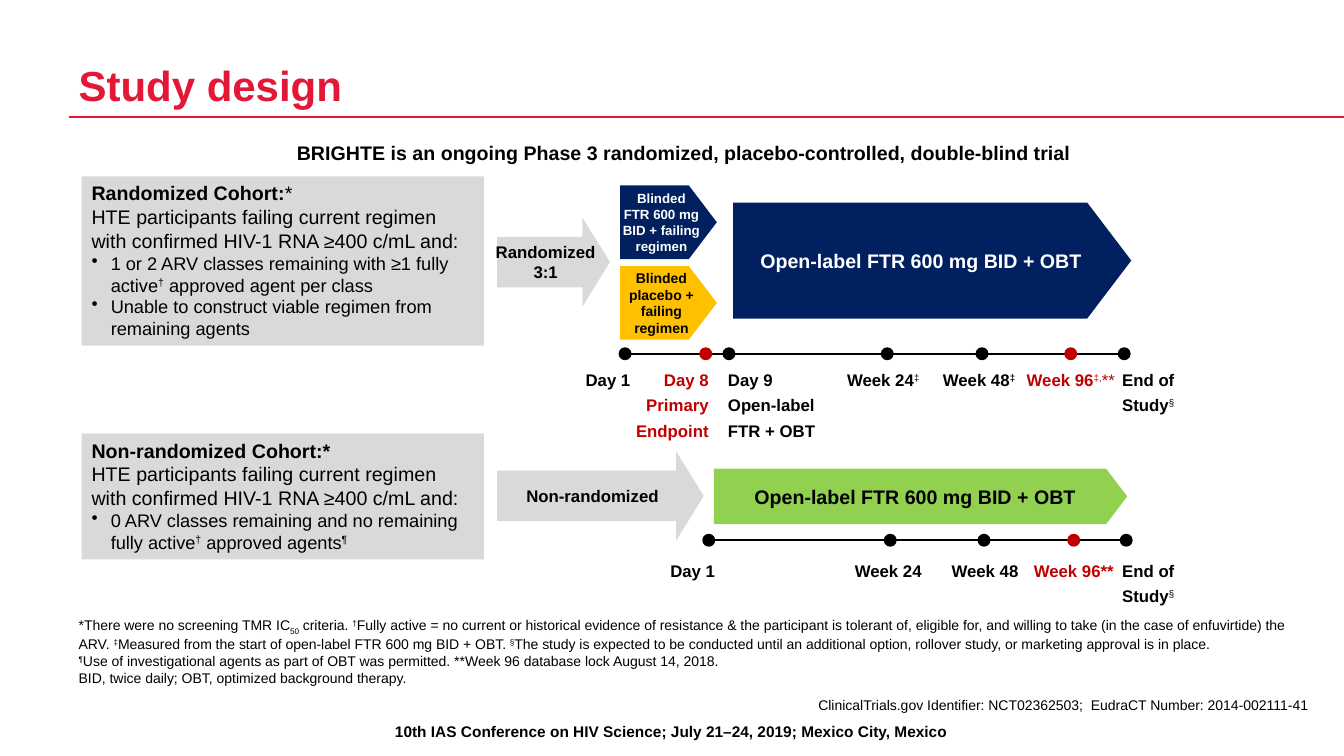
"""Build the study design slide with two cohorts and their timelines."""
from lxml import etree
from pptx import Presentation
from pptx import util as u
from pptx.dml.color import RGBColor
from pptx.enum import shapes, text
from pptx.oxml.ns import qn

INK = {"black": "000000", "white": "FFFFFF", "red": "E31836", "dark": "C00000",
       "grey": "D9D9D9", "navy": "002060", "gold": "FFC000", "green": "92D050"}
CELL = u.Inches(0.1)
KIND = shapes.MSO_SHAPE
LEFT, MID, RIGHT = text.PP_ALIGN.LEFT, text.PP_ALIGN.CENTER, text.PP_ALIGN.RIGHT
TOP, CORE, LOW = text.MSO_ANCHOR.TOP, text.MSO_ANCHOR.MIDDLE, text.MSO_ANCHOR.BOTTOM

deck = Presentation()
deck.slide_width, deck.slide_height = u.Inches(13.33), u.Inches(7.5)
slide = deck.slides.add_slide(deck.slide_layouts[6])


def box(kind, spot, lines=(), size=12, ink="black", fill=None, bold=True,
        align=MID, anchor=CORE, pad=True, wrap=True, gap=0):
    """Add a shape or text box; ^ toggles superscript, _ subscript, ~ bold."""
    place = [round(n * CELL) for n in spot]
    if kind is None:
        item = slide.shapes.add_textbox(*place)
    else:
        item = slide.shapes.add_shape(kind, *place)
        item.shadow.inherit = False
        item.fill.solid()
        item.fill.fore_color.rgb = RGBColor.from_string(INK[fill])
        item.line.fill.background()
    frame = item.text_frame
    frame.word_wrap, frame.vertical_anchor = wrap, anchor
    if not pad:
        frame.margin_left = frame.margin_right = 0
        frame.margin_top = frame.margin_bottom = 0
    for i, line in enumerate(lines):
        para = frame.paragraphs[0] if i == 0 else frame.add_paragraph()
        para.alignment = align
        if i and gap:
            para.space_before = u.Pt(gap)
        dot = line.startswith("•")
        if dot:
            props = para._p.get_or_add_pPr()
            props.set("marL", str(u.Inches(0.19)))
            props.set("indent", str(-u.Inches(0.19)))
            etree.SubElement(props, qn("a:buChar")).set("char", "•")
        base, heavy, part = 0, bold, ""
        for sign in line.lstrip("•") + "\0":
            if sign not in "^_~\0":
                part += sign
                continue
            if part:
                run = para.add_run()
                run.text, part = part, ""
                font = run.font
                font.name, font.size = "Arial", u.Pt(size - dot)
                font.bold = heavy
                font.color.rgb = RGBColor.from_string(INK[ink])
                if base:
                    run._r.get_or_add_rPr().set("baseline", str(base))
            if sign == "~":
                heavy = not heavy
            elif sign in "^_":
                base = 0 if base else {"^": 30000, "_": -25000}[sign]
    return item


def rule(x, y, end, ink, width):
    """Draw a level line."""
    line = slide.shapes.add_connector(
        shapes.MSO_CONNECTOR.STRAIGHT, *(round(n * CELL) for n in (x, y, end, y)))
    line.line.color.rgb = RGBColor.from_string(INK[ink])
    line.line.width = u.Pt(width)
    etree.SubElement(line._element.spPr, qn("a:effectLst"))


rule(6.8, 11.6, 133.3, "red", 2)
title = box(None, (7.8, 1.7, 110, 9.2), ["Study design"], 30, "red",
            align=LEFT, anchor=LOW, pad=False)
title.text_frame.paragraphs[0].line_spacing = u.Pt(35)
box(KIND.ROUNDED_RECTANGLE, (27.8, 13, 80.1, 4.3),
    ["BRIGHTE is an ongoing Phase 3 randomized, placebo-controlled, double-blind trial"],
    14, fill="white")

lead = "HTE participants failing current regimen with confirmed HIV-1 RNA ≥400 c/mL and:"
cohorts = [
    (17.5, 16.8, ["~Randomized Cohort:~*", lead,
                  "•1 or 2 ARV classes remaining with ≥1 fully active^†^ approved agent per class",
                  "•Unable to construct viable regimen from remaining agents"]),
    (43, 12.5, ["~Non-randomized Cohort:*", lead,
                "•0 ARV classes remaining and no remaining fully active^†^ approved agents^¶"]),
]
for y, high, lines in cohorts:
    box(KIND.RECTANGLE, (8.1, y, 39.9, high), lines, 14, fill="grey",
        bold=False, align=LEFT, anchor=TOP)

for y, wide, lines in [(21.6, 11.2, ["Randomized", "3:1"]),
                       (44.8, 20.5, ["Non-randomized"])]:
    arrow = box(KIND.RIGHT_ARROW, (49.3, y, wide, 8.8), lines, fill="grey", wrap=False)
    arrow.adjustments[0], arrow.adjustments[1] = 0.57, 0.31

phase = ["Open-label FTR 600 mg BID + OBT"]
stages = [
    ((61.5, 18.4, 9.6, 7.3), ["Blinded", "FTR 600 mg", "BID + failing", "regimen"],
     9.5, "white", "navy"),
    ((61.5, 26.4, 9.6, 7.3), ["Blinded", "placebo +", "failing", "regimen"],
     10, "black", "gold"),
    ((72.7, 20.1, 39.5, 11.5), phase, 14, "white", "navy"),
    ((70.8, 46.5, 41, 5.5), phase, 14, "black", "green"),
]
for spot, lines, size, ink, fill in stages:
    stage = box(KIND.PENTAGON, spot, lines, size, ink, fill, wrap=False)
    stage.adjustments[0] = 0.38

finish = ["End of", "Study~^§"]
times = [
    (35.1, 36.7, [
        (62, 60.3, MID, "black", ["Day 1"]),
        (70, 70.3, RIGHT, "dark", ["Day 8", "Primary", "Endpoint"]),
        (72.3, 72.2, LEFT, "black", ["Day 9", "Open-label", "FTR + OBT"]),
        (88, 87.6, MID, "black", ["Week 24~^‡"]),
        (97.4, 97.1, MID, "black", ["Week 48^‡"]),
        (106.2, 106.2, MID, "dark", ["Week 96~^‡,^**"]),
        (111.5, 111.3, LEFT, "black", finish)]),
    (53.6, 55.6, [
        (70.3, 68.7, MID, "black", ["Day 1"]),
        (88.3, 88.1, MID, "black", ["Week 24"]),
        (97.6, 97.7, MID, "black", ["Week 48"]),
        (106.5, 106.5, MID, "dark", ["Week 96**"]),
        (111.7, 111.3, LEFT, "black", finish)]),
]
wide = 10.5
shift = {LEFT: 0, MID: wide / 2, RIGHT: wide}
for y, low, marks in times:
    rule(marks[0][0], y, marks[-1][0], "black", 1.5)
    for x, tag, align, ink, lines in marks:
        dot = box(KIND.OVAL, (x - 0.5, y - 0.5, 1, 1), fill=ink)
        dot.line.color.rgb = RGBColor.from_string(INK[ink])
        dot.line.width = u.Pt(2)
        box(None, (tag - shift[align], low, wide, 7.1), lines, ink=ink,
            align=align, anchor=TOP, pad=False, gap=3.6)

notes = [
    "*There were no screening TMR IC_50_ criteria. ^†^Fully active = no current or historical "
    "evidence of resistance & the participant is tolerant of, eligible for, and willing to take "
    "(in the case of enfuvirtide) the ARV. ^‡^Measured from the start of open-label FTR 600 mg "
    "BID + OBT. ^§^The study is expected to be conducted until an additional option, rollover "
    "study, or marketing approval is in place.",
    "^¶^Use of investigational agents as part of OBT was permitted. "
    "**Week 96 database lock August 14, 2018.",
    "BID, twice daily; OBT, optimized background therapy.",
]
box(None, (7.8, 59, 122.2, 9.1), notes, 10, bold=False, align=LEFT, anchor=LOW, pad=False)
box(None, (7.8, 68.8, 121.9, 2),
    ["ClinicalTrials.gov Identifier: NCT02362503;  EudraCT Number: 2014-002111-41"],
    10, bold=False, align=RIGHT, anchor=LOW, pad=False)
box(None, (0.9, 71.1, 131.4, 2.9),
    ["10th IAS Conference on HIV Science; July 21–24, 2019; Mexico City, Mexico"],
    11, anchor=TOP)

deck.save("out.pptx")
